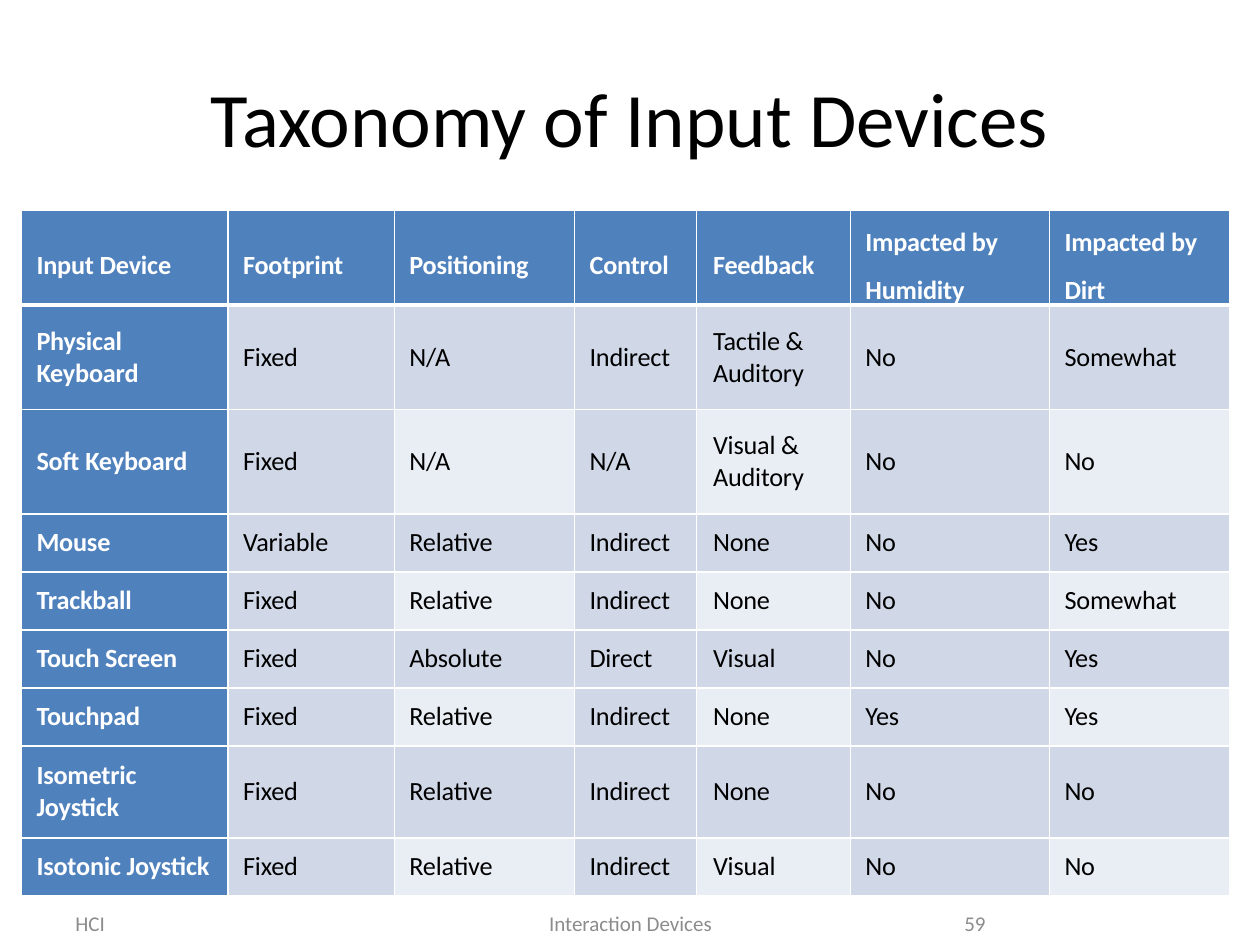
import pptx
import pptx.dml.color
import pptx.enum.text
import pptx.oxml
import pptx.oxml.ns
import pptx.util
from pptx.util import Inches

THEME = {
    "font": "Calibri",
    "black": "000000",
    "white": "FFFFFF",
    "gray": "8C8C8C",
    "accent": "4F81BD",
    "band": "D0D8E8",
    "light": "E9EDF4",
    "title_size": 44,
    "table_size": 15,
    "footer_size": 12,
}
ALIGN = pptx.enum.text.PP_ALIGN
MIDDLE = pptx.enum.text.MSO_ANCHOR.MIDDLE


def style_text(paragraph, text, size, color, bold=False):
    run = paragraph.add_run()
    run.text = text
    values = {"name": THEME["font"], "size": pptx.util.Pt(size), "bold": bold}
    for name, value in values.items():
        setattr(run.font, name, value)
    run.font.color.rgb = pptx.dml.color.RGBColor.from_string(THEME[color])
    return run


def add_border(cell, side, width):
    cell._tc.get_or_add_tcPr().append(pptx.oxml.parse_xml(
        f'<a:{side} {pptx.oxml.ns.nsdecls("a")} w="{pptx.util.Pt(width)}">'
        f'<a:solidFill><a:srgbClr val="{THEME["white"]}"/></a:solidFill></a:{side}>'
    ))


presentation = pptx.Presentation()
presentation.slide_width = Inches(10)
presentation.slide_height = Inches(7.5)
slide = presentation.slides.add_slide(presentation.slide_layouts[6])

labels = [
    ("Taxonomy of Input Devices", 0.5, 0.3, 9, 1.25, ALIGN.CENTER, "title_size", "black"),
    ("HCI", 0.5, 7.17, 2.33, 0.31, ALIGN.LEFT, "footer_size", "gray"),
    ("Interaction Devices", 3.42, 7.17, 3.17, 0.31, ALIGN.CENTER, "footer_size", "gray"),
    ("59", 7.17, 7.17, 0.75, 0.31, ALIGN.RIGHT, "footer_size", "gray"),
]
for text, left, top, width, height, alignment, size, color in labels:
    shape = slide.shapes.add_textbox(Inches(left), Inches(top), Inches(width), Inches(height))
    for name, value in {"word_wrap": True, "vertical_anchor": MIDDLE}.items():
        setattr(shape.text_frame, name, value)
    paragraph = shape.text_frame.paragraphs[0]
    paragraph.alignment = alignment
    style_text(paragraph, text, THEME[size], color)

rows = [
    ("Input Device", "Footprint", "Positioning", "Control", "Feedback",
     "Impacted by Humidity", "Impacted by Dirt"),
    ("Physical Keyboard", "Fixed", "N/A", "Indirect", "Tactile & Auditory", "No", "Somewhat"),
    ("Soft Keyboard", "Fixed", "N/A", "N/A", "Visual & Auditory", "No", "No"),
    ("Mouse", "Variable", "Relative", "Indirect", "None", "No", "Yes"),
    ("Trackball", "Fixed", "Relative", "Indirect", "None", "No", "Somewhat"),
    ("Touch Screen", "Fixed", "Absolute", "Direct", "Visual", "No", "Yes"),
    ("Touchpad", "Fixed", "Relative", "Indirect", "None", "Yes", "Yes"),
    ("Isometric Joystick", "Fixed", "Relative", "Indirect", "None", "No", "No"),
    ("Isotonic Joystick", "Fixed", "Relative", "Indirect", "Visual", "No", "No"),
]
column_widths = [1.64, 1.32, 1.43, 0.97, 1.22, 1.58, 1.43]
row_heights = [0.73, 0.83, 0.83, 0.46, 0.46, 0.46, 0.46, 0.73, 0.46]
feedback_column = rows[0].index("Feedback")

table = slide.shapes.add_table(
    len(rows), len(column_widths), Inches(0.17), Inches(1.67),
    Inches(sum(column_widths)), Inches(sum(row_heights)),
).table
for column, width in zip(table.columns, column_widths):
    column.width = Inches(width)
for row, height in zip(table.rows, row_heights):
    row.height = Inches(height)

for row_index, row in enumerate(rows):
    for column_index, text in enumerate(row):
        cell = table.cell(row_index, column_index)
        is_header = row_index == 0
        is_heading = is_header or column_index == 0
        is_light = row_index % 2 == 0 and column_index % 2 == 0
        side_margin, end_margin = (0.13, 0.05) if column_index == feedback_column else (0.12, 0)
        cell_format = {
            "vertical_anchor": MIDDLE,
            "margin_left": Inches(side_margin),
            "margin_right": Inches(side_margin),
            "margin_top": Inches(end_margin),
            "margin_bottom": Inches(end_margin),
        }
        for name, value in cell_format.items():
            setattr(cell, name, value)
        borders = {"lnL": 1, "lnR": 1, "lnT": 3 if row_index == 1 else 1, "lnB": 3 if is_header else 1}
        for side, width in borders.items():
            add_border(cell, side, width)
        fill = "accent" if is_heading else "light" if is_light else "band"
        cell.fill.solid()
        cell.fill.fore_color.rgb = pptx.dml.color.RGBColor.from_string(THEME[fill])
        paragraph = cell.text_frame.paragraphs[0]
        paragraph.line_spacing = 1.5 if is_header else 1.0
        color = "white" if is_heading else "black"
        run = style_text(paragraph, text, THEME["table_size"], color, is_heading)
        run._r.get_or_add_rPr().set("spc", "-10")

presentation.save("out.pptx")
